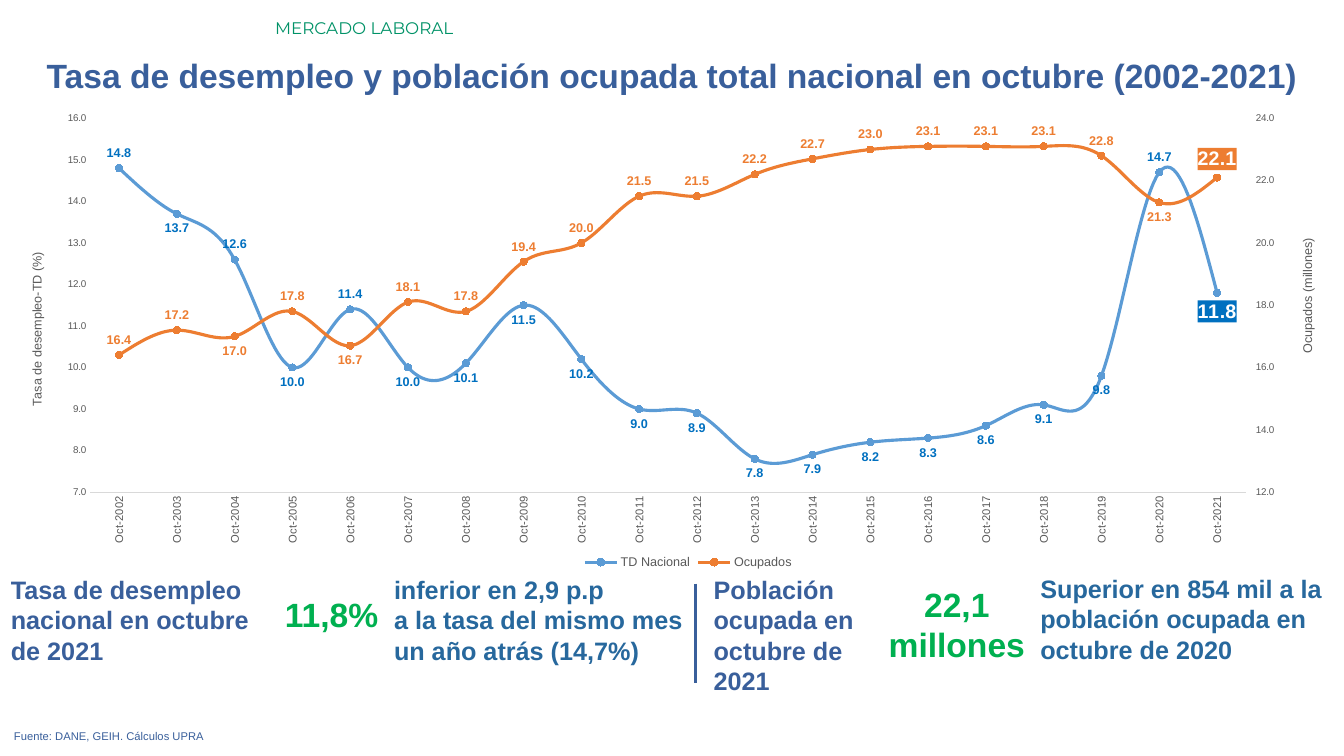
from copy import deepcopy
from lxml import etree
from pptx import Presentation
from pptx.chart.axis import CategoryAxis, ValueAxis
from pptx.chart.data import CategoryChartData
from pptx.dml.color import RGBColor
from pptx.enum.chart import (XL_CHART_TYPE, XL_LABEL_POSITION, XL_LEGEND_POSITION,
                             XL_MARKER_STYLE, XL_TICK_MARK)
from pptx.enum.shapes import MSO_CONNECTOR
from pptx.enum.text import PP_ALIGN
from pptx.oxml import parse_xml
from pptx.oxml.ns import nsdecls, qn
from pptx.util import Inches, Pt

LINE = XL_CHART_TYPE.LINE_MARKERS
ABOVE, BELOW = XL_LABEL_POSITION.ABOVE, XL_LABEL_POSITION.BELOW
BOTTOM = XL_LEGEND_POSITION.BOTTOM
CIRCLE = XL_MARKER_STYLE.CIRCLE
NONE, OUT = XL_TICK_MARK.NONE, XL_TICK_MARK.OUTSIDE
STRAIGHT = MSO_CONNECTOR.STRAIGHT
LEFT, RIGHT = PP_ALIGN.LEFT, PP_ALIGN.RIGHT
CENTER, JUSTIFY = PP_ALIGN.CENTER, PP_ALIGN.JUSTIFY
NAVY, TEAL, GREEN, GRAY = "395F9B", "27689D", "00B050", "595959"
BLUE, ORANGE, DEEP = "5B9BD5", "ED7D31", "0070C0"

RATES = [14.8, 13.7, 12.6, 10, 11.4, 10, 10.1, 11.5, 10.2, 9,
         8.9, 7.8, 7.9, 8.2, 8.3, 8.6, 9.1, 9.8, 14.7, 11.8]
JOBS = [16.4, 17.2, 17, 17.8, 16.7, 18.1, 17.8, 19.4, 20, 21.5,
        21.5, 22.2, 22.7, 23, 23.1, 23.1, 23.1, 22.8, 21.3, 22.1]

TEXTS = [
    (2.63, 0.13, 10.7, 0.3, "MERCADO LABORAL", 12, "009267", LEFT, False, "Montserrat"),
    (0, 0.5, 13.33, 0.5,
     "Tasa de desempleo y población ocupada total nacional en octubre (2002-2021)",
     24, NAVY, CENTER),
    (0.01, 5.65, 2.84, 1.01, "Tasa de desempleo nacional en octubre de 2021", 18, NAVY),
    (2.63, 5.84, 1.22, 0.5, "11,8%", 24, GREEN, RIGHT),
    (3.81, 5.65, 3.07, 1.01,
     "inferior en 2,9 p.p\na la tasa del mismo mes un año atrás (14,7%)", 18, TEAL),
    (0.04, 7.19, 12.91, 0.24, "Fuente: DANE, GEIH. Cálculos UPRA", 8, NAVY, JUSTIFY, False),
    (6.98, 5.65, 1.83, 1.31, "Población ocupada en octubre de 2021", 18, NAVY),
    (8.69, 5.74, 1.6, 0.91, "22,1 millones", 24, GREEN, CENTER),
    (10.22, 5.64, 3.22, 1.01,
     "Superior en 854 mil a la población ocupada en octubre de 2020", 18, TEAL),
]


def color(code):
    return RGBColor.from_string(code)


def style(font, size, code, bold=False, face="Arial"):
    font.size, font.bold, font.name = Pt(size), bold, face
    font.color.rgb = color(code)


def add_text(slide, x, y, w, h, text, size, code, align=LEFT, bold=True, face="Arial"):
    box = slide.shapes.add_textbox(Inches(x), Inches(y), Inches(w), Inches(h))
    frame = box.text_frame
    frame.word_wrap = True
    frame.text = text
    for para in frame.paragraphs:
        para.alignment = align
        for run in para.runs:
            style(run.font, size, code, bold, face)


def add_rule(slide, x, top, end):
    rule = slide.shapes.add_connector(STRAIGHT, Inches(x), Inches(top), Inches(x), Inches(end))
    rule.line.color.rgb = color(NAVY)
    rule.line.width = Pt(2.25)
    etree.SubElement(rule._element.spPr, qn("a:effectLst"))


def layout(x, y, w=None, h=None):
    inner = '<c:layoutTarget val="inner"/>' if w else ""
    size = f'<c:w val="{w}"/><c:h val="{h}"/>' if w else ""
    return parse_xml(
        f'<c:layout {nsdecls("c")}><c:manualLayout>{inner}'
        f'<c:xMode val="edge"/><c:yMode val="edge"/><c:x val="{x}"/><c:y val="{y}"/>'
        f'{size}</c:manualLayout></c:layout>')


def put_layout(node, new, spot):
    for old in node.findall(qn("c:layout")):
        node.remove(old)
    node.insert(spot, new)


def turn(node):
    for body in node.iter(qn("a:bodyPr")):
        body.set("rot", "-5400000")
        body.set("vert", "horz")


def set_scale(axis, low, high, step, title, x, y, tick):
    axis.minimum_scale, axis.maximum_scale, axis.major_unit = low, high, step
    axis.has_major_gridlines = False
    axis.major_tick_mark, axis.minor_tick_mark = tick, NONE
    axis.format.line.fill.background()
    labels = axis.tick_labels
    labels.number_format, labels.number_format_is_linked = "0.0", False
    style(labels.font, 7, GRAY)
    head = axis.axis_title
    head.text_frame.text = title
    style(head.text_frame.paragraphs[0].runs[0].font, 9, GRAY)
    turn(head._element)
    put_layout(head._element, layout(x, y), 1)


def set_label(point, place, size, code, fill=None):
    label = point.data_label
    style(label.font, size, code, True)
    label.position = place
    text = label._dLbl.find(qn("c:txPr"))
    text.addprevious(parse_xml(
        f'<c:numFmt {nsdecls("c")} formatCode="#,##0.0" sourceLinked="0"/>'))
    if fill:
        text.addprevious(parse_xml(
            f'<c:spPr {nsdecls("c", "a")}><a:solidFill><a:srgbClr val="{fill}"/>'
            '</a:solidFill></c:spPr>'))


def set_series(series, code, ink, place, other, flips):
    series.smooth = True
    series.format.line.color.rgb = color(code)
    series.format.line.width = Pt(2.25)
    mark = series.marker
    mark.style, mark.size = CIRCLE, 5
    mark.format.fill.solid()
    mark.format.fill.fore_color.rgb = color(code)
    mark.format.line.color.rgb = color(code)
    labels = series.data_labels
    labels.show_value, labels.position = True, place
    labels.number_format, labels.number_format_is_linked = "#,##0.0", False
    style(labels.font, 9, ink, True)
    for spot in flips:
        set_label(series.points[spot], other, 9, ink)
    set_label(series.points[19], place, 14, "FFFFFF", ink)


def split_axes(chart):
    area = chart.element.xpath("//c:plotArea")[0]
    first = area.find(qn("c:lineChart"))
    second = deepcopy(first)
    first.remove(first.findall(qn("c:ser"))[1])
    second.remove(second.findall(qn("c:ser"))[0])
    first.addnext(second)
    left = chart.value_axis
    cat, val = (deepcopy(axis._element) for axis in (chart.category_axis, left))
    left._element.addnext(val)
    val.addnext(cat)
    ids = {cat.find(qn("c:axId")).get("val"): "5001", val.find(qn("c:axId")).get("val"): "5002"}
    for node in (second, cat, val):
        for ref in node.iter(qn("c:axId"), qn("c:crossAx")):
            ref.set("val", ids[ref.get("val")])
    val.find(qn("c:axPos")).set("val", "r")
    val.find(qn("c:crosses")).set("val", "max")
    CategoryAxis(cat).visible = False
    put_layout(area, layout(0.053, 0.031, 0.888, 0.794), 0)
    return left, ValueAxis(val)


def add_trend(slide):
    data = CategoryChartData(number_format="0.0")
    data.categories = [f"Oct-{year}" for year in range(2002, 2022)]
    data.add_series("TD Nacional", RATES)
    data.add_series("Ocupados", JOBS)
    chart = slide.shapes.add_chart(
        LINE, Inches(0.21), Inches(1.03), Inches(12.91), Inches(4.67), data).chart
    style(chart.font, 10, GRAY)
    chart.has_title = False
    chart.has_legend = True
    chart.legend.position = BOTTOM
    chart.legend.include_in_layout = False
    style(chart.legend.font, 9, GRAY)
    put_layout(chart.legend._element, layout(0.43, 0.95), 1)
    chart.plots[0].vary_by_categories = False
    rate, jobs = chart.plots[0].series
    set_series(rate, BLUE, DEEP, BELOW, ABOVE, (0, 2, 4, 18))
    set_series(jobs, ORANGE, ORANGE, ABOVE, BELOW, (2, 4, 18))
    base = chart.category_axis
    base.major_tick_mark = NONE
    base.format.line.color.rgb = color("D9D9D9")
    base.format.line.width = Pt(0.75)
    style(base.tick_labels.font, 8, GRAY)
    turn(base._element)
    left, right = split_axes(chart)
    set_scale(left, 7, 16, 1, "Tasa de desempleo-TD (%)", 0.004, 0.31, NONE)
    set_scale(right, 12, 24, 2, "Ocupados (millones)", 0.98, 0.28, OUT)


def main():
    deck = Presentation()
    deck.slide_width, deck.slide_height = Inches(13.33), Inches(7.5)
    slide = deck.slides.add_slide(deck.slide_layouts[6])
    for item in TEXTS:
        add_text(slide, *item)
    add_rule(slide, 6.9, 5.79, 6.78)
    add_trend(slide)
    deck.save("out.pptx")


if __name__ == "__main__":
    main()
